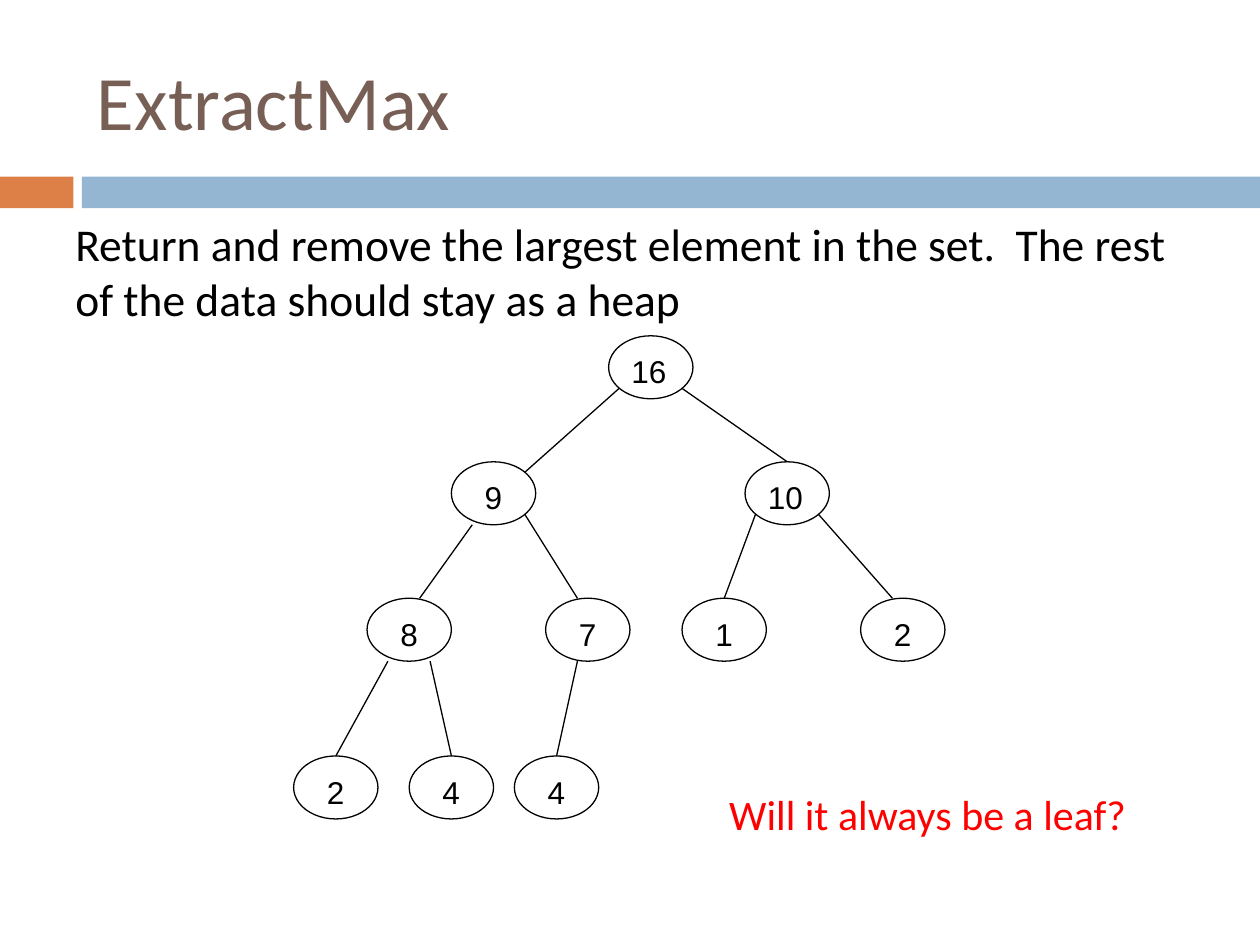
from lxml.etree import SubElement
from pptx import Presentation
from pptx.dml.color import RGBColor
from pptx.enum.shapes import MSO_CONNECTOR, MSO_SHAPE
from pptx.enum.text import MSO_ANCHOR, MSO_AUTO_SIZE, PP_ALIGN
from pptx.oxml.ns import qn
from pptx.util import Cm, Pt

COLORS = {"title": "775F55", "accent": "DD8047", "band": "94B6D2",
          "ink": "000000", "question": "FF0000"}
NODE_WIDTH, NODE_HEIGHT = 1.7, 1.27
LEVELS = [0, 2.54, 5.29, 8.47]

# Heap in array order: value, level, left edge within the tree
NODES = [("16", 0, 6.35), ("9", 1, 3.18), ("10", 1, 9.1),
         ("8", 2, 1.48), ("7", 2, 5.08), ("1", 2, 7.83), ("2", 2, 11.43),
         ("2", 3, 0), ("4", 3, 2.33), ("4", 3, 4.45)]

# Edge to each child: start within the parent node, end within the child node
EDGES = [((0.21, 1.06), (1.48, 0.21)), ((1.48, 1.06), (0.85, 0)),
         ((0.42, 1.27), (1.06, 0)), ((1.48, 1.06), (0.64, 0)),
         ((0.21, 1.06), (0.85, 0)), ((1.48, 1.06), (0.64, 0)),
         ((0.42, 1.27), (0.85, 0)), ((1.27, 1.27), (0.85, 0)),
         ((0.64, 1.27), (0.85, 0))]


def color(name):
    return RGBColor.from_string(COLORS[name])


def place(shape, box):
    shape.left, shape.top, shape.width, shape.height = map(Cm, box)


def write(frame, text, size, font, ink):
    para = frame.paragraphs[0]
    para.text = text
    para.alignment = PP_ALIGN.LEFT
    para.font.size = Pt(size)
    para.font.name = font
    para.font.color.rgb = color(ink)
    return para


def add_text(shapes, box, text, size, font, ink, wrap=True):
    frame = shapes.add_textbox(*map(Cm, box)).text_frame
    frame.word_wrap = wrap
    if not wrap:
        frame.auto_size = MSO_AUTO_SIZE.SHAPE_TO_FIT_TEXT
    return write(frame, text, size, font, ink)


def add_band(page, box):
    left, top, width, height = box
    accent_width, gap = 1.48, 0.17
    start = accent_width + gap
    for name, x, part_width in [("accent", left, accent_width),
                                ("band", left + start, width - start)]:
        bar = page.shapes.add_shape(
            MSO_SHAPE.RECTANGLE, *map(Cm, (x, top, part_width, height)))
        bar.shadow.inherit = False
        bar.fill.solid()
        bar.fill.fore_color.rgb = color(name)
        bar.line.fill.background()


def add_title(page, box, text):
    title = page.shapes.title
    place(title, box)
    title.text_frame.vertical_anchor = MSO_ANCHOR.MIDDLE
    write(title.text_frame, text, 44, "Calibri", "title")


def add_node(shapes, left, top, value):
    oval = shapes.add_shape(
        MSO_SHAPE.OVAL, *map(Cm, (left, top, NODE_WIDTH, NODE_HEIGHT)))
    oval.shadow.inherit = False
    oval.fill.background()
    oval.line.color.rgb = color("ink")
    oval.line.width = Pt(0.75)
    inset = 0.42 if len(value) == 1 else 0.21
    label = add_text(shapes, (left + inset, top + 0.21, 1.48, 1.02),
                     value, 18, "Arial", "ink")
    label.space_before = Pt(2)


def add_edge(shapes, start, end):
    edge = shapes.add_connector(MSO_CONNECTOR.STRAIGHT, *map(Cm, start + end))
    edge.line.color.rgb = color("ink")
    edge.line.width = Pt(0.75)
    SubElement(edge._element.spPr, qn("a:effectLst"))


def add_heap(page, left, top):
    shapes = page.shapes.add_group_shape().shapes
    corners = [(left + x, top + LEVELS[level]) for _, level, x in NODES]
    for (value, _, _), corner in zip(NODES, corners):
        add_node(shapes, *corner, value)
    for child, (start, end) in enumerate(EDGES, 1):
        parent_x, parent_y = corners[(child - 1) // 2]
        child_x, child_y = corners[child]
        add_edge(shapes, (parent_x + start[0], parent_y + start[1]),
                 (child_x + end[0], child_y + end[1]))


def main():
    deck = Presentation()
    deck.slide_width, deck.slide_height = Cm(25.4), Cm(19.05)
    page = deck.slides.add_slide(deck.slide_layouts[5])

    # Heading
    add_band(page, (0, 3.56, 25.4, 0.64))
    add_title(page, (1.7, 0.64, 22.66, 2.74), "ExtractMax")

    # Heap tree
    add_heap(page, 5.92, 6.77)

    # Explanation and question
    body = add_text(
        page.shapes, (1.27, 4.24, 23.09, 2.29),
        "Return and remove the largest element in the set.  "
        "The rest of the data should stay as a heap", 26, "Calibri", "ink")
    body.space_before = Pt(7)
    add_text(page.shapes, (14.45, 15.77, 8.99, 1.27),
             "Will it always be a leaf?", 24, "Calibri", "question", wrap=False)

    deck.save("out.pptx")


if __name__ == "__main__":
    main()
